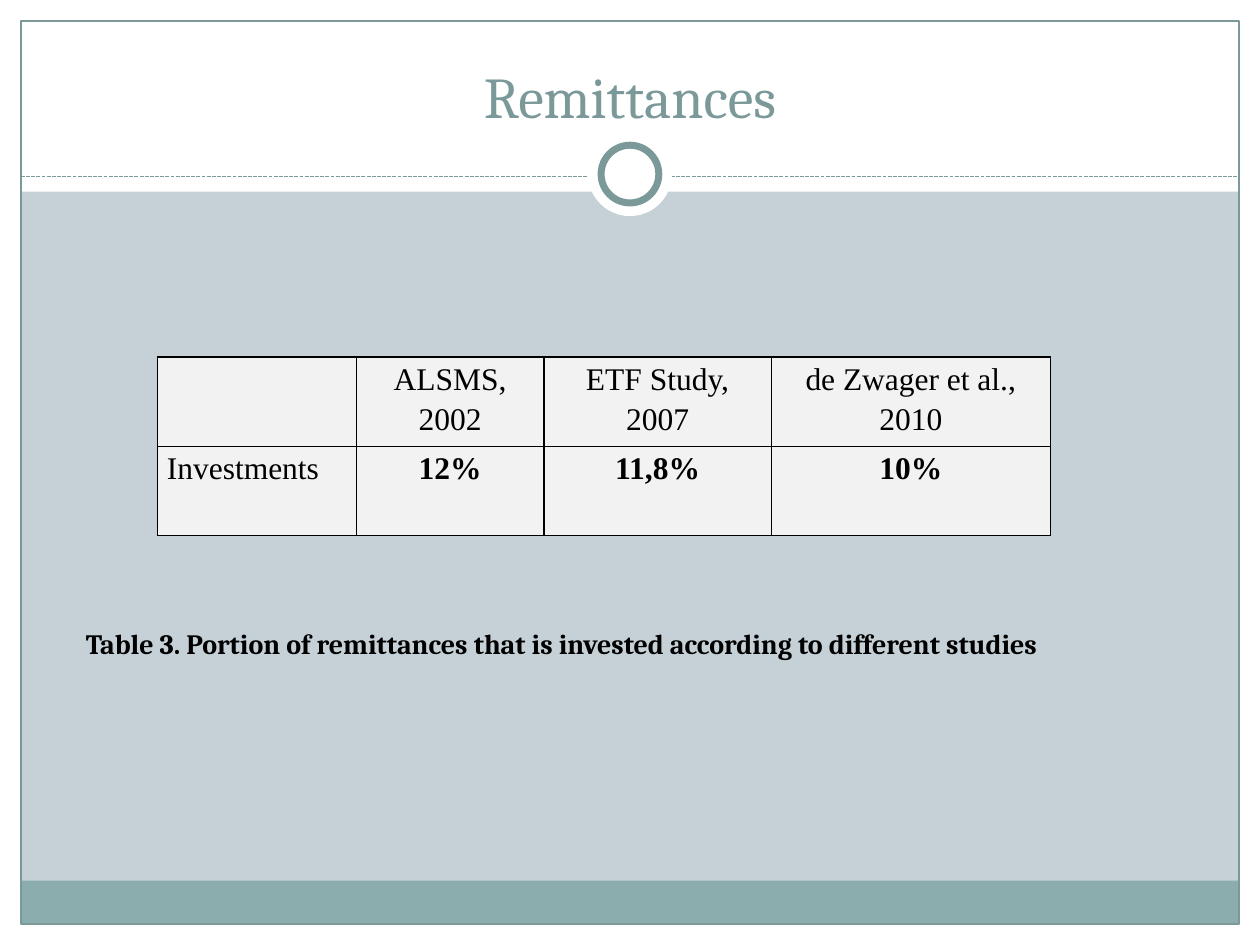
from dataclasses import dataclass
from typing import Optional

from lxml.etree import SubElement
from pptx import Presentation
from pptx.dml.color import RGBColor as RGB
from pptx.enum.dml import MSO_LINE as Dash
from pptx.enum.shapes import MSO_CONNECTOR as Conn, MSO_SHAPE as Shape
from pptx.enum.text import MSO_ANCHOR as Anchor, MSO_AUTO_SIZE as AutoSize, PP_ALIGN as Align
from pptx.oxml.ns import qn
from pptx.util import Pt


@dataclass(frozen=True)
class Theme:
    white: RGB = RGB(0xFF, 0xFF, 0xFF)
    black: RGB = RGB(0, 0, 0)
    back: RGB = RGB(0xC5, 0xD1, 0xD7)
    accent: RGB = RGB(0x7C, 0x99, 0x9A)
    footer: RGB = RGB(0x8C, 0xAD, 0xAE)
    cell: RGB = RGB(0xF2, 0xF2, 0xF2)
    serif: str = "Cambria"
    table_font: str = "Times New Roman"
    title_size: int = 33
    table_size: int = 18
    caption_size: int = 16


T = Theme()
WIDTH, HEIGHT, EDGE = 720, 540, 12
HEADER = 109.5
RULE_Y = 101


@dataclass(frozen=True)
class Block:
    kind: Shape
    left: float
    top: float
    width: float
    height: float
    fill: Optional[RGB] = None
    line_width: float = 0


def circle(diameter: float, line_width: float = 0) -> Block:
    """White circle centred on the header ornament."""
    return Block(Shape.OVAL, (WIDTH - diameter) / 2, 99.5 - diameter / 2,
                 diameter, diameter, T.white, line_width)


FRAME = (
    Block(Shape.RECTANGLE, 0, HEIGHT - EDGE, WIDTH, EDGE, T.white),
    Block(Shape.RECTANGLE, 0, 0, WIDTH, HEADER, T.white),
    Block(Shape.RECTANGLE, 0, 0, EDGE, HEIGHT, T.white),
    Block(Shape.RECTANGLE, WIDTH - EDGE, 0, EDGE, HEIGHT, T.white),
    Block(Shape.RECTANGLE, EDGE, 503.2, WIDTH - 2 * EDGE, 24.8, T.footer),
    Block(Shape.RECTANGLE, EDGE, EDGE, WIDTH - 2 * EDGE, HEIGHT - 2 * EDGE, None, 0.75),
)
ORNAMENT = (circle(48), circle(33, 4))

COLUMNS = (113.6, 107.2, 130, 159.5)
ROW_HEIGHT = 51
ROWS = (
    ("", "ALSMS, 2002", "ETF Study, 2007", "de Zwager et al., 2010"),
    ("Investments", "12%", "11,8%", "10%"),
)


def set_all(obj, values: dict) -> None:
    for name, value in values.items():
        setattr(obj, name, value)


def write(tf, text: str, align: Align, name: str, size: float, color: RGB,
          bold: bool = False, spacing: float = 1.0) -> None:
    p = tf.paragraphs[0]
    set_all(p, {"alignment": align, "line_spacing": spacing})
    r = p.add_run()
    r.text = text
    set_all(r.font, {"name": name, "size": Pt(size), "bold": bold})
    r.font.color.rgb = color


def draw_block(slide, b: Block) -> None:
    sp = slide.shapes.add_shape(b.kind, Pt(b.left), Pt(b.top), Pt(b.width), Pt(b.height))
    sp.shadow.inherit = False
    if b.fill is None:
        sp.fill.background()
    else:
        sp.fill.solid()
        sp.fill.fore_color.rgb = b.fill
    if b.line_width:
        sp.line.color.rgb = T.accent
        sp.line.width = Pt(b.line_width)
    else:
        sp.line.fill.background()


def draw_rule(slide) -> None:
    rule = slide.shapes.add_connector(Conn.STRAIGHT, Pt(EDGE), Pt(RULE_Y),
                                      Pt(WIDTH - EDGE), Pt(RULE_Y))
    rule.line.color.rgb = T.accent
    set_all(rule.line, {"width": Pt(0.75), "dash_style": Dash.SQUARE_DOT})
    SubElement(rule.element.spPr, qn("a:effectLst"))


def draw_title(slide) -> None:
    title = slide.shapes.title
    set_all(title, {"left": Pt(24), "top": Pt(18), "width": Pt(672), "height": Pt(60)})
    tf = title.text_frame
    set_all(tf, {"vertical_anchor": Anchor.BOTTOM, "auto_size": AutoSize.NONE})
    write(tf, "Remittances", Align.CENTER, T.serif, T.title_size, T.accent)
    # The placeholder comes first in the tree; bring it above the header band.
    slide.shapes.element.append(title.element)


def add_borders(cell) -> None:
    pr = cell._tc.get_or_add_tcPr()
    for i, side in enumerate(("lnL", "lnR", "lnT", "lnB")):
        ln = pr.makeelement(qn(f"a:{side}"), {"w": str(Pt(1))})
        fill = SubElement(ln, qn("a:solidFill"))
        SubElement(fill, qn("a:srgbClr"), val=str(T.black))
        pr.insert(i, ln)  # borders precede the fill


def draw_table(slide) -> None:
    table = slide.shapes.add_table(len(ROWS), len(COLUMNS), Pt(90), Pt(204),
                                   Pt(sum(COLUMNS)), Pt(ROW_HEIGHT * len(ROWS))).table
    set_all(table, {"first_row": False, "horz_banding": False})
    for column, width in zip(table.columns, COLUMNS):
        column.width = Pt(width)
    for i, row in enumerate(ROWS):
        table.rows[i].height = Pt(ROW_HEIGHT)
        for j, text in enumerate(row):
            cell = table.cell(i, j)
            set_all(cell, {"margin_left": Pt(5.4), "margin_right": Pt(5.4),
                           "margin_top": 0, "margin_bottom": 0})
            cell.fill.solid()
            cell.fill.fore_color.rgb = T.cell
            add_borders(cell)
            if text:
                write(cell.text_frame, text, Align.CENTER if j else Align.LEFT,
                      T.table_font, T.table_size, T.black,
                      bold=i > 0 and j > 0, spacing=1.15)


def draw_caption(slide) -> None:
    tf = slide.shapes.add_textbox(Pt(42), Pt(354.5), Pt(655), Pt(26.5)).text_frame
    set_all(tf, {"word_wrap": True, "vertical_anchor": Anchor.MIDDLE})
    write(tf, "Table 3. Portion of remittances that is invested according to different studies",
          Align.JUSTIFY, T.serif, T.caption_size, T.black, bold=True)


def main() -> None:
    prs = Presentation()
    set_all(prs, {"slide_width": Pt(WIDTH), "slide_height": Pt(HEIGHT)})
    slide = prs.slides.add_slide(prs.slide_layouts.get_by_name("Title Only"))
    slide.background.fill.solid()
    slide.background.fill.fore_color.rgb = T.back
    for block in FRAME:
        draw_block(slide, block)
    draw_rule(slide)
    for block in ORNAMENT:
        draw_block(slide, block)
    draw_title(slide)
    draw_table(slide)
    draw_caption(slide)
    prs.save("out.pptx")


if __name__ == "__main__":
    main()
